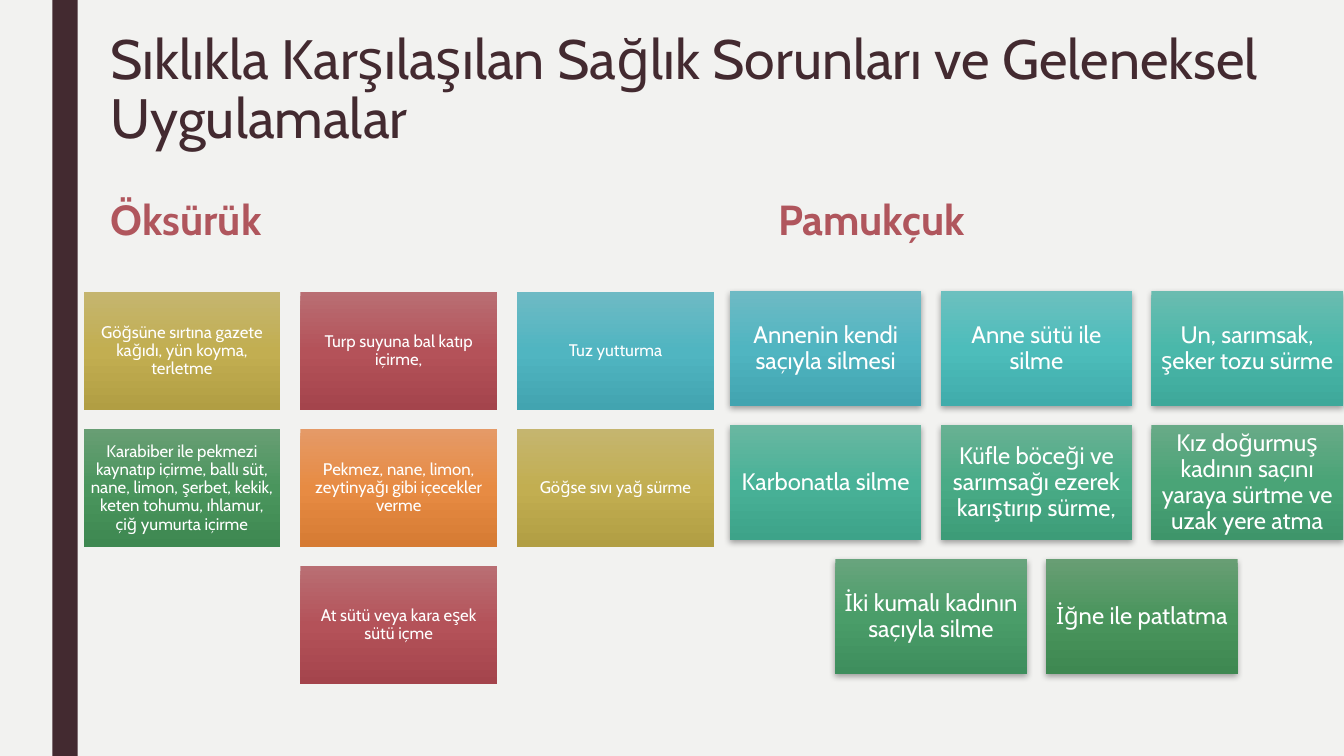
import copy
from dataclasses import dataclass

import pptx
import pptx.dml.color
import pptx.enum.shapes
import pptx.enum.text
import pptx.oxml
import pptx.oxml.ns
import pptx.util

Inches = pptx.util.Inches
Pt = pptx.util.Pt
Anchor = pptx.enum.text.MSO_ANCHOR
Align = pptx.enum.text.PP_ALIGN

SHADOW = (
    f'<a:outerShdw {pptx.oxml.ns.nsdecls("a")} blurRad="{Pt(4.5)}" dist="{Pt(1.5)}" '
    'dir="5400000" algn="ctr" rotWithShape="0">'
    '<a:srgbClr val="000000"><a:alpha val="35000"/></a:srgbClr></a:outerShdw>'
)


class Theme:
    font = "Cabin"
    background = "F2F2F0"
    dark = "432A30"
    heading = "B0565D"
    light = "FFFFFF"
    title_size = 39.6
    heading_size = 30
    # Each gradient runs from top to bottom: start, middle, end.
    gold = ("C5B56F", "C2AE51", "B19E43")
    red = ("B96E73", "B45259", "A4444C")
    blue = ("6EBAC4", "50B5C1", "42A4B0")
    green = ("689E74", "4A955D", "3E8851")
    orange = ("E59A67", "E78B43", "D67B33")
    cough_gradients = (gold, red, blue, green, orange)
    thrush_gradients = (
        blue,
        ("6CC0BF", "4DBDBB", "40ACAB"),
        ("6ABCB0", "4AB8AA", "3EA89A"),
        ("69B7A1", "49B298", "3DA389"),
        ("68B193", "49AB86", "3D9C78"),
        ("68AA87", "4AA477", "3E956A"),
        ("68A47D", "4A9D69", "3E8E5D"),
        green,
    )


@dataclass
class CardGrid:
    left: float
    top: float
    width: float
    height: float
    column_step: float
    row_step: float
    text_size: float
    inset: float
    gradients: tuple
    shadow: bool
    columns: int = 3


def rgb(value):
    return pptx.dml.color.RGBColor.from_string(value)


class SlideBuilder:
    def __init__(self, page, theme):
        self.page = page
        self.theme = theme
        page.background.fill.solid()
        page.background.fill.fore_color.rgb = rgb(theme.background)

    def set_text(self, frame, text, size, color, spacing, anchor,
                 bold=False, align=Align.LEFT):
        frame.word_wrap = True
        frame.auto_size = pptx.enum.text.MSO_AUTO_SIZE.NONE
        frame.vertical_anchor = anchor
        frame.text = text
        para = frame.paragraphs[0]
        para.alignment = align
        para.line_spacing = spacing
        para.space_before = Pt(0)
        para.font.name = self.theme.font
        para.font.size = Pt(size)
        para.font.bold = bold
        para.font.color.rgb = rgb(color)

    def rectangle(self, left, top, width, height):
        box = self.page.shapes.add_shape(
            pptx.enum.shapes.MSO_SHAPE.RECTANGLE,
            Inches(left), Inches(top), Inches(width), Inches(height))
        box.shadow.inherit = False
        box.line.fill.background()
        return box

    def side_bar(self, left, width, height):
        bar = self.rectangle(left, 0, width, height)
        bar.fill.solid()
        bar.fill.fore_color.rgb = rgb(self.theme.dark)

    def title(self, text, left, top, width, height):
        title = self.page.shapes.title
        title.left, title.top = Inches(left), Inches(top)
        title.width, title.height = Inches(width), Inches(height)
        self.set_text(title.text_frame, text, self.theme.title_size,
                      self.theme.dark, 0.89, Anchor.TOP)

    def heading(self, text, left, top, width, height):
        box = self.page.shapes.add_textbox(
            Inches(left), Inches(top), Inches(width), Inches(height))
        self.set_text(box.text_frame, text, self.theme.heading_size,
                      self.theme.heading, 0.84, Anchor.BOTTOM, bold=True)

    def gradient(self, box, colors):
        box.fill.gradient()
        box.fill.gradient_angle = 270
        stop_list = box._element.spPr.find(".//" + pptx.oxml.ns.qn("a:gsLst"))
        stop_list.append(copy.deepcopy(stop_list[-1]))
        for index, (stop, color) in enumerate(zip(box.fill.gradient_stops, colors)):
            stop.position = index / 2
            stop.color.rgb = rgb(color)

    def card(self, text, left, top, grid, colors):
        box = self.rectangle(left, top, grid.width, grid.height)
        self.gradient(box, colors)
        if grid.shadow:
            effects = box._element.spPr.find(pptx.oxml.ns.qn("a:effectLst"))
            effects.append(pptx.oxml.parse_xml(SHADOW))
        frame = box.text_frame
        frame.margin_left = frame.margin_right = Inches(grid.inset)
        frame.margin_top = frame.margin_bottom = Inches(grid.inset)
        self.set_text(frame, text, grid.text_size, self.theme.light, 0.9,
                      Anchor.MIDDLE, align=Align.CENTER)

    def cards(self, texts, grid):
        """Fill the grid row by row, centring a last row that is not full."""
        for index, text in enumerate(texts):
            row, column = divmod(index, grid.columns)
            in_row = min(grid.columns, len(texts) - row * grid.columns)
            offset = column + (grid.columns - in_row) / 2
            self.card(text, grid.left + offset * grid.column_step,
                      grid.top + row * grid.row_step, grid,
                      grid.gradients[index % len(grid.gradients)])


COUGH_REMEDIES = (
    "Göğsüne sırtına gazete kağıdı, yün koyma, terletme",
    "Turp suyuna bal katıp içirme,",
    "Tuz yutturma",
    "Karabiber ile pekmezi kaynatıp içirme, ballı süt, nane, limon, şerbet, "
    "kekik, keten tohumu, ıhlamur, çiğ yumurta içirme",
    "Pekmez, nane, limon, zeytinyağı gibi içecekler verme",
    "Göğse sıvı yağ sürme",
    "At sütü veya kara eşek sütü içme",
)
THRUSH_REMEDIES = (
    "Annenin kendi saçıyla silmesi",
    "Anne sütü ile silme",
    "Un, sarımsak, şeker tozu sürme",
    "Karbonatla silme",
    "Küfle böceği ve sarımsağı ezerek karıştırıp sürme,",
    "Kız doğurmuş kadının saçını yaraya sürtme ve uzak yere atma",
    "İki kumalı kadının saçıyla silme",
    "İğne ile patlatma",
)


def main():
    deck = pptx.Presentation()
    deck.slide_width, deck.slide_height = Inches(13.33), Inches(7.5)
    builder = SlideBuilder(deck.slides.add_slide(deck.slide_layouts[5]), Theme())

    builder.side_bar(0.52, 0.25, 7.5)
    builder.title("Sıklıkla Karşılaşılan Sağlık Sorunları ve Geleneksel Uygulamalar",
                  1, 0.27, 12.15, 1.55)
    for text, left in (("Öksürük", 1), ("Pamukçuk", 7.62)):
        builder.heading(text, left, 1.57, 4.86, 0.9)

    builder.cards(COUGH_REMEDIES, CardGrid(
        left=0.83, top=2.9, width=1.95, height=1.17, column_step=2.15,
        row_step=1.36, text_size=12, inset=0.05,
        gradients=Theme.cough_gradients, shadow=False))
    builder.cards(THRUSH_REMEDIES, CardGrid(
        left=7.24, top=2.89, width=1.9, height=1.14, column_step=2.09,
        row_step=1.33, text_size=17, inset=0.07,
        gradients=Theme.thrush_gradients, shadow=True))

    deck.save("out.pptx")


if __name__ == "__main__":
    main()
